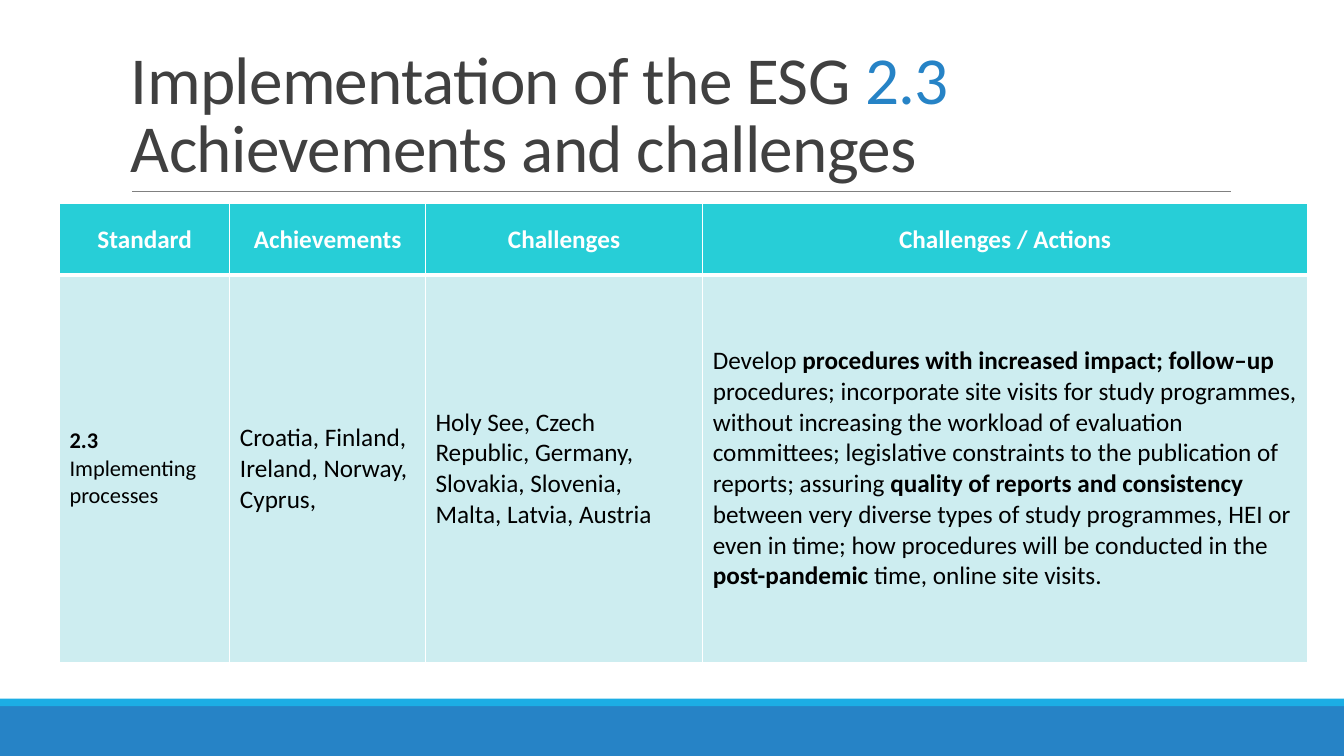
from lxml.etree import SubElement
from pptx import Presentation
from pptx.dml.color import RGBColor
from pptx.enum.shapes import MSO_CONNECTOR as Connector, MSO_SHAPE as Shape
from pptx.enum.text import MSO_ANCHOR as Anchor, PP_ALIGN as Align
from pptx.oxml.ns import qn
from pptx.util import Inches, Pt

WIDTH, HEIGHT = Inches(13.33), Inches(7.5)
FONT = "Calibri"

WHITE = RGBColor(0xFF, 0xFF, 0xFF)
BLACK = RGBColor(0, 0, 0)
DARK = RGBColor(0x40, 0x40, 0x40)
GREY = RGBColor(0x80, 0x80, 0x80)
BLUE = RGBColor(0x26, 0x83, 0xC6)
SKY = RGBColor(0x1C, 0xAD, 0xE4)
TURQUOISE = RGBColor(0x27, 0xCE, 0xD7)
PALE = RGBColor(0xCD, 0xED, 0xF0)

COLUMNS = [Inches(w) for w in (1.69, 1.94, 2.75, 6)]
ROWS = [Inches(h) for h in (0.71, 3.84)]
HEADINGS = ["Standard", "Achievements", "Challenges", "Challenges / Actions"]
# Each cell: text size and its (text, bold) runs
FINDINGS = [
    (16, [("2.3 ", True), ("Implementing processes", False)]),
    (18, [("Croatia, Finland, Ireland, Norway, Cyprus,", False)]),
    (18, [("Holy See, Czech Republic, Germany, Slovakia, Slovenia, "
           "Malta, Latvia, Austria", False)]),
    (18, [("Develop ", False),
          ("procedures with increased impact; follow–up ", True),
          ("procedures; incorporate site visits for study programmes, without "
           "increasing the workload of evaluation committees; legislative "
           "constraints to the publication of reports; assuring ", False),
          ("quality of reports and consistency ", True),
          ("between very diverse types of study programmes, HEI or even in "
           "time; how procedures will be conducted in the ", False),
          ("post-pandemic", True),
          (" time, online site visits.", False)]),
]


def add_run(paragraph, text, color, **formats):
    run = paragraph.add_run()
    run.text = text
    for name, value in {"name": FONT, **formats}.items():
        setattr(run.font, name, value)
    run.font.color.rgb = color
    return run


def add_band(slide, top, height, color):
    """Draw a full-width strip at the given shares of the slide height."""
    band = slide.shapes.add_shape(Shape.RECTANGLE, 0, int(HEIGHT * top),
                                  WIDTH, int(HEIGHT * height))
    band.shadow.inherit = False
    band.fill.solid()
    band.fill.fore_color.rgb = color
    band.line.fill.background()


def add_rule(slide, left, right, top):
    rule = slide.shapes.add_connector(Connector.STRAIGHT, left, top, right, top)
    rule.line.color.rgb = GREY
    rule.line.width = Pt(0.5)
    SubElement(rule.element.spPr, qn("a:effectLst"))


def add_title(slide, parts):
    box = slide.shapes.add_textbox(Inches(1.2), Inches(0.31), Inches(11), Inches(1.59))
    frame = box.text_frame
    frame.word_wrap = True
    frame.vertical_anchor = Anchor.BOTTOM
    paragraph = frame.paragraphs[0]
    paragraph.line_spacing = 0.85
    for text, color in parts:
        run = add_run(paragraph, text, color, size=Pt(48))
        run.font._element.set("spc", "-50")


def add_borders(cell, bottom):
    """Give a cell white borders, 1 pt except for the bottom one."""
    properties = cell._tc.get_or_add_tcPr()
    for side, points in {"L": 1, "R": 1, "T": 1, "B": bottom}.items():
        border = SubElement(properties, qn(f"a:ln{side}"), w=str(Pt(points)))
        fill = SubElement(border, qn("a:solidFill"))
        SubElement(fill, qn("a:srgbClr"), val=str(WHITE))


def fill_cell(cell, runs, size, fill, color, align, bottom):
    add_borders(cell, bottom)
    cell.fill.solid()
    cell.fill.fore_color.rgb = fill
    cell.vertical_anchor = Anchor.MIDDLE
    paragraph = cell.text_frame.paragraphs[0]
    paragraph.alignment = align
    for text, bold in runs:
        add_run(paragraph, text, color, size=Pt(size), bold=bold)


def add_findings(slide):
    table = slide.shapes.add_table(len(ROWS), len(COLUMNS), Inches(0.59), Inches(2.02),
                                   sum(COLUMNS), sum(ROWS)).table
    table.horz_banding = False
    for row, height in zip(table.rows, ROWS):
        row.height = height
    for index, width in enumerate(COLUMNS):
        table.columns[index].width = width
        fill_cell(table.cell(0, index), [(HEADINGS[index], True)], 18,
                  TURQUOISE, WHITE, Align.CENTER, bottom=3)
        size, runs = FINDINGS[index]
        fill_cell(table.cell(1, index), runs, size,
                  PALE, BLACK, Align.LEFT, bottom=1)


def main():
    deck = Presentation()
    deck.slide_width, deck.slide_height = WIDTH, HEIGHT
    slide = deck.slides.add_slide(deck.slide_layouts[6])
    add_band(slide, 14 / 15, 1 / 15, BLUE)
    add_band(slide, 0.924, 0.01, SKY)
    add_rule(slide, Inches(1.31), Inches(12.21), Inches(1.9))
    add_title(slide, [("Implementation of the ESG ", DARK), ("2.3 ", BLUE),
                      ("Achievements and challenges", DARK)])
    add_findings(slide)
    deck.save("out.pptx")


if __name__ == "__main__":
    main()
